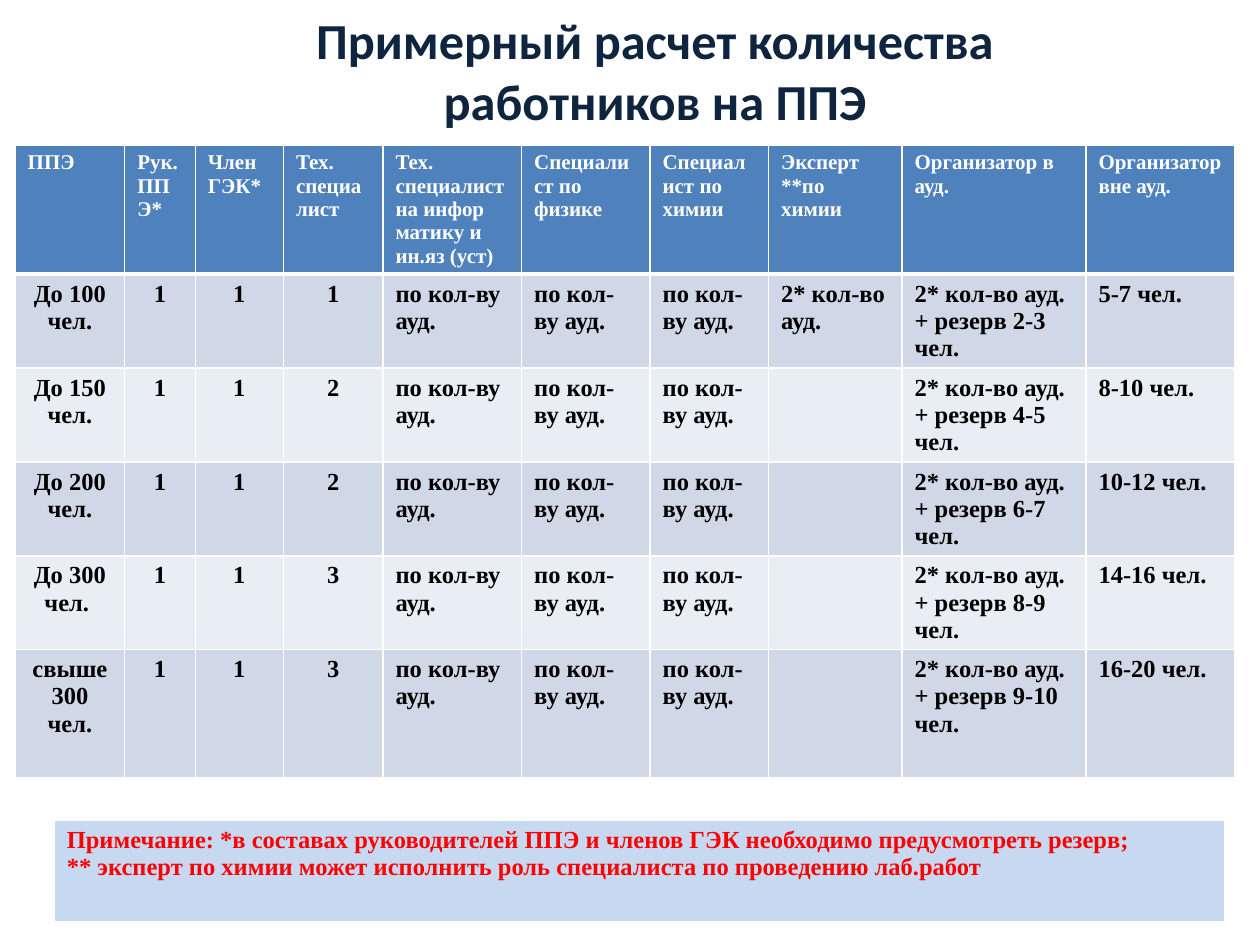
from dataclasses import dataclass

from lxml import etree
from pptx import Presentation
from pptx.dml.color import RGBColor
from pptx.enum.text import MSO_ANCHOR, MSO_AUTO_SIZE, PP_ALIGN
from pptx.oxml.ns import qn
from pptx.util import Inches, Pt

CENTER, LEFT = PP_ALIGN.CENTER, PP_ALIGN.LEFT
MIDDLE = MSO_ANCHOR.MIDDLE
NO_FIT = MSO_AUTO_SIZE.NONE
TITLE_ONLY = 5

COLORS = {
    "title": "0F243E",
    "header": "4F81BD",
    "band_dark": "D0D8E8",
    "band_light": "E9EDF4",
    "note": "C6D9F1",
    "white": "FFFFFF",
    "black": "000000",
    "red": "FF0000",
}


@dataclass(frozen=True)
class CellStyle:
    fill: str
    color: str
    size: float
    bottom: float = 1


@dataclass(frozen=True)
class Staff:
    site: str
    technicians: str
    reserve: str
    outside: str
    expert: str = ""

    def cells(self) -> list[str]:
        return [
            self.site, "1", "1", self.technicians,
            *["по кол-ву ауд."] * 3,
            self.expert,
            f"2* кол-во ауд.\n+ резерв {self.reserve} чел.",
            f"{self.outside} чел.",
        ]


HEADERS = [
    "ППЭ", "Рук. ППЭ*", "Член ГЭК*", "Тех. специалист",
    "Тех. специалист на инфор\nматику и ин.яз (уст)",
    "Специалист по физике", "Специалист по химии", "Эксперт **по химии",
    "Организатор в ауд.", "Организатор вне ауд.",
]
STAFF = [
    Staff("До 100 чел.", "1", "2-3", "5-7", "2* кол-во ауд."),
    Staff("До 150 чел.", "2", "4-5", "8-10"),
    Staff("До 200 чел.", "2", "6-7", "10-12"),
    Staff("До 300 чел. ", "3", "8-9", "14-16"),
    Staff("свыше 300 чел.", "3", "9-10", "16-20"),
]
NOTE = (
    "Примечание: *в составах руководителей ППЭ и членов ГЭК необходимо предусмотреть резерв;\n"
    "** эксперт по химии может исполнить роль специалиста по проведению лаб.работ"
)
COL_WIDTHS = [0.87, 0.56, 0.7, 0.79, 1.1, 1.02, 0.94, 1.06, 1.46, 1.18]
ROW_HEIGHTS = [0.97, 0.59, 0.59, 0.59, 0.59, 1.02]
CENTERED_COLS = 4

HEADER_STYLE = CellStyle("header", "white", 12, bottom=3)
BAND_STYLES = [CellStyle(band, "black", 14) for band in ("band_dark", "band_light")]
NOTE_STYLE = CellStyle("note", "red", 14, bottom=3)


def rgb(name: str) -> RGBColor:
    return RGBColor.from_string(COLORS[name])


def format_font(font, name: str, size: float, color: str) -> None:
    for attr, value in {"name": name, "size": Pt(size), "bold": True}.items():
        setattr(font, attr, value)
    font.color.rgb = rgb(color)


def set_borders(cell, bottom: float) -> None:
    tc_pr = cell._tc.get_or_add_tcPr()
    widths = {"a:lnL": 1, "a:lnR": 1, "a:lnT": 1, "a:lnB": bottom}
    for i, (tag, width) in enumerate(widths.items()):
        ln = etree.Element(qn(tag), w=str(Pt(width)))
        fill = etree.SubElement(ln, qn("a:solidFill"))
        etree.SubElement(fill, qn("a:srgbClr"), val=COLORS["white"])
        tc_pr.insert(i, ln)


def fill_cell(cell, text: str, style: CellStyle, align: PP_ALIGN) -> None:
    cell.fill.solid()
    cell.fill.fore_color.rgb = rgb(style.fill)
    set_borders(cell, style.bottom)
    cell.text = text
    for p in cell.text_frame.paragraphs:
        p.alignment = align
        for r in p.runs:
            format_font(r.font, "Times New Roman", style.size, style.color)


def add_grid(s, left: float, top: float, widths: list[float], heights: list[float]):
    frame = s.shapes.add_table(
        len(heights), len(widths), Inches(left), Inches(top),
        Inches(sum(widths)), Inches(sum(heights)),
    )
    table = frame.table
    for col, width in zip(table.columns, widths):
        col.width = Inches(width)
    for row, height in zip(table.rows, heights):
        row.height = Inches(height)
    return table


def add_title(s, text: str) -> None:
    sp = s.shapes.title
    box = {"left": 1.38, "top": 0.13, "width": 7.64, "height": 0.85}
    for attr, value in box.items():
        setattr(sp, attr, Inches(value))
    tf = sp.text_frame
    for attr, value in {"word_wrap": True, "auto_size": NO_FIT, "vertical_anchor": MIDDLE}.items():
        setattr(tf, attr, value)
    p = tf.paragraphs[0]
    p.alignment = CENTER
    r = p.add_run()
    r.text = text
    format_font(r.font, "Calibri", 28.8, "title")


def add_staff_table(s) -> None:
    table = add_grid(s, 0.12, 1.15, COL_WIDTHS, ROW_HEIGHTS)
    for col, text in enumerate(HEADERS):
        fill_cell(table.cell(0, col), text, HEADER_STYLE, LEFT)
    for row, staff in enumerate(STAFF):
        for col, text in enumerate(staff.cells()):
            align = CENTER if col < CENTERED_COLS else LEFT
            fill_cell(table.cell(row + 1, col), text, BAND_STYLES[row % 2], align)


def add_note(s) -> None:
    table = add_grid(s, 0.43, 6.51, [9.29], [0.82])
    fill_cell(table.cell(0, 0), NOTE, NOTE_STYLE, LEFT)


def main() -> None:
    prs = Presentation()
    prs.slide_width, prs.slide_height = Inches(10), Inches(7.5)
    s = prs.slides.add_slide(prs.slide_layouts[TITLE_ONLY])
    add_title(s, "Примерный расчет количества работников на ППЭ")
    add_staff_table(s)
    add_note(s)
    prs.save("out.pptx")


if __name__ == "__main__":
    main()
